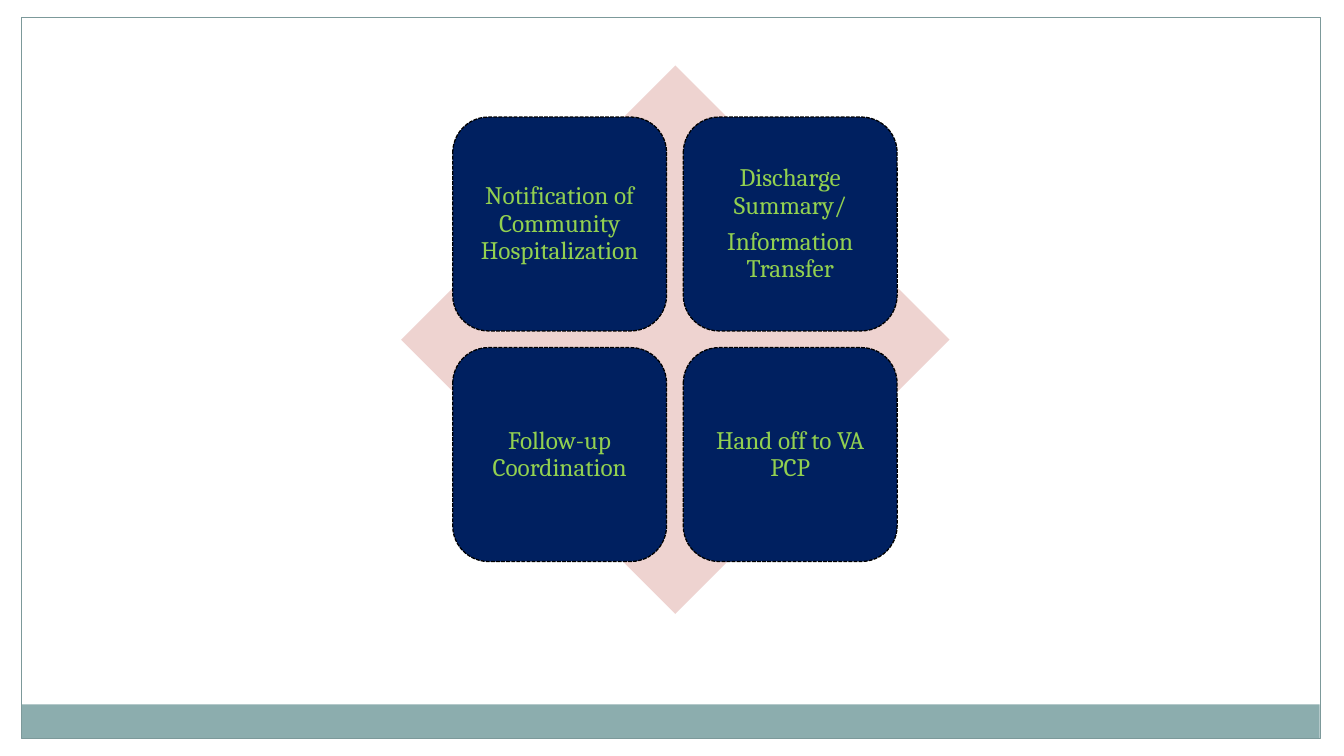
from dataclasses import dataclass

from pptx import Presentation
from pptx.dml.color import RGBColor
from pptx.enum.dml import MSO_LINE
from pptx.enum.shapes import MSO_SHAPE
from pptx.enum.text import MSO_ANCHOR, PP_ALIGN
from pptx.util import Cm, Pt

RECTANGLE = MSO_SHAPE.RECTANGLE
DIAMOND = MSO_SHAPE.DIAMOND
ROUNDED = MSO_SHAPE.ROUNDED_RECTANGLE
DASH = MSO_LINE.SQUARE_DOT
MIDDLE = MSO_ANCHOR.MIDDLE
CENTER = PP_ALIGN.CENTER
BLANK_LAYOUT = 6


@dataclass(frozen=True)
class Theme:
    font: str = "Cambria"
    text_size: float = 18
    text: str = "92D050"
    card: str = "002060"
    card_line: str = "000000"
    diamond: str = "EED3D0"
    band: str = "8CADAE"
    frame: str = "7C999A"


THEME = Theme()

CARDS = [
    ["Notification of Community Hospitalization"],
    ["Discharge Summary/", "Information Transfer"],
    ["Follow-up Coordination"],
    ["Hand off to VA PCP"],
]
CARD_LEFT, CARD_TOP = 11.41, 2.95
CARD_SIZE, CARD_PITCH = 5.39, 5.81


def add_box(page, kind, left, top, width, height, fill=None, line=None, weight=0.75):
    box = page.shapes.add_shape(kind, Cm(left), Cm(top), Cm(width), Cm(height))
    box.shadow.inherit = False
    if fill:
        box.fill.solid()
        box.fill.fore_color.rgb = RGBColor.from_string(fill)
    else:
        box.fill.background()
    if line:
        box.line.color.rgb = RGBColor.from_string(line)
        box.line.width = Pt(weight)
    else:
        box.line.fill.background()
    return box


def write_text(box, lines, size, color, font, inset=0.18, spacing=0.9, after=6.3):
    frame = box.text_frame
    frame.word_wrap = True
    frame.vertical_anchor = MIDDLE
    frame.margin_left = frame.margin_right = Cm(inset)
    frame.margin_top = frame.margin_bottom = Cm(inset)
    for index, line in enumerate(lines):
        para = frame.add_paragraph() if index else frame.paragraphs[0]
        para.alignment = CENTER
        para.line_spacing = spacing
        para.space_after = Pt(after)
        span = para.add_run()
        span.text = line
        span.font.name = font
        span.font.size = Pt(size)
        span.font.color.rgb = RGBColor.from_string(color)


def add_card(page, left, top, lines):
    card = add_box(page, ROUNDED, left, top, CARD_SIZE, CARD_SIZE,
                   fill=THEME.card, line=THEME.card_line, weight=0.9)
    card.line.dash_style = DASH
    write_text(card, lines, size=THEME.text_size, color=THEME.text, font=THEME.font)


def main():
    deck = Presentation()
    deck.slide_width, deck.slide_height = Cm(33.87), Cm(19.05)
    page = deck.slides.add_slide(deck.slide_layouts[BLANK_LAYOUT])
    add_box(page, RECTANGLE, 0.54, 17.75, 32.72, 0.86, fill=THEME.band)
    add_box(page, RECTANGLE, 0.55, 0.43, 32.72, 18.19, line=THEME.frame)
    add_box(page, DIAMOND, 10.11, 1.65, 13.82, 13.82, fill=THEME.diamond)
    for index, lines in enumerate(CARDS):
        row, column = divmod(index, 2)
        add_card(page, CARD_LEFT + column * CARD_PITCH, CARD_TOP + row * CARD_PITCH, lines)
    deck.save("out.pptx")


if __name__ == "__main__":
    main()
